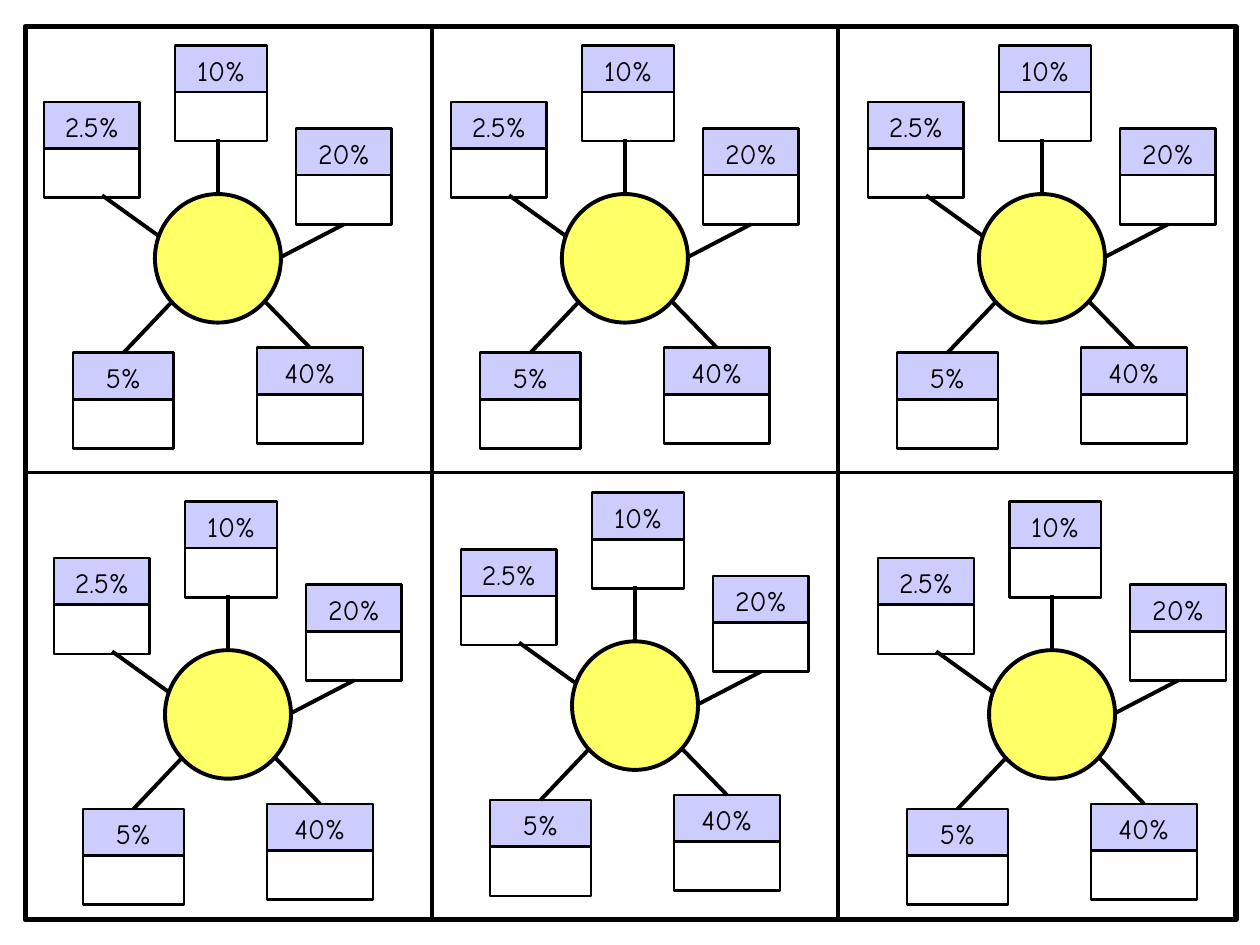
from itertools import product

from lxml import etree
from pptx import Presentation
from pptx.dml.color import RGBColor
from pptx.enum.shapes import MSO_CONNECTOR, MSO_SHAPE
from pptx.enum.text import MSO_ANCHOR, PP_ALIGN
from pptx.oxml.ns import qn
from pptx.util import Inches, Pt

RECTANGLE, OVAL = MSO_SHAPE.RECTANGLE, MSO_SHAPE.OVAL
STRAIGHT = MSO_CONNECTOR.STRAIGHT
MIDDLE, CENTER = MSO_ANCHOR.MIDDLE, PP_ALIGN.CENTER

COLORS = {"line": "000000", "circle": "FFFF66", "label": "CCCCFF", "answer": "FFFFFF"}
FONT = "Comic Neue"
SLIDE_COLUMNS, SLIDE_ROWS = 1000, 750
UNIT = Inches(10) // SLIDE_COLUMNS
TOP, BOTTOM = 0, 2

CIRCLE_WIDTH, CIRCLE_HEIGHT = 100, 102
BOX_HEIGHT, ANSWER_STEP = 39, 37
CIRCLE_COLUMNS = (123, 446, 777)
LOWER_SHIFT = 8
UPPER_ROW = 154
LOWER_ROWS = (516, 509, 516)
FRAME = (20, 21, 961, 709)
DIVIDER_COLUMNS, DIVIDER_ROW = (343, 665), 375

# Label, box column, box row, box width, spoke start, spoke end, joined side
BRANCHES = (
    ("10%", 16, -118, 73, (50, 1), (50, -44), None),
    ("5%", -65, 126, 80, (13, 86), (-26, 126), TOP),
    ("20%", 112, -52, 76, (100, 50), (150, 21), BOTTOM),
    ("40%", 81, 122, 84, (88, 86), (123, 122), TOP),
    ("2.5%", -88, -73, 76, (4, 34), (-42, 1), None),
)


def grid(*counts):
    """Turn grid counts into slide lengths."""
    return [count * UNIT for count in counts]


def color(name):
    """Return the named colour."""
    return RGBColor.from_string(COLORS[name])


def add_outlined(shapes, kind, place, fill, weight):
    """Add a black-outlined shape, hollow when fill is None."""
    shape = shapes.add_shape(kind, *grid(*place))
    shape.shadow.inherit = False
    if fill:
        shape.fill.solid()
        shape.fill.fore_color.rgb = color(fill)
    else:
        shape.fill.background()
    shape.line.color.rgb = color("line")
    shape.line.width = Pt(weight)
    return shape


def add_line(shapes, start, end):
    """Add a straight black line between two grid points."""
    line = shapes.add_connector(STRAIGHT, *grid(*start, *end))
    line.line.color.rgb = color("line")
    line.line.width = Pt(2.25)
    etree.SubElement(line._element.spPr, qn("a:effectLst"))
    return line


def add_percent_box(shapes, column, row, width, text):
    """Add a labelled box above an empty answer box."""
    label = add_outlined(shapes, RECTANGLE, (column, row, width, BOX_HEIGHT), "label", 1.5)
    label.text_frame.vertical_anchor = MIDDLE
    para = label.text_frame.paragraphs[0]
    para.text = text
    para.alignment = CENTER
    para.font.name = FONT
    para.font.size = Pt(16)
    para.font.color.rgb = color("line")
    place = (column, row + ANSWER_STEP, width, BOX_HEIGHT)
    answer = add_outlined(shapes, RECTANGLE, place, "answer", 1.5)
    return {TOP: label, BOTTOM: answer}


def add_spider(slide, column, row):
    """Add one circle with its five percentage branches."""
    shapes = slide.shapes.add_group_shape().shapes
    add_outlined(shapes, OVAL, (column, row, CIRCLE_WIDTH, CIRCLE_HEIGHT), "circle", 2.25)
    for text, across, down, width, start, end, side in BRANCHES:
        boxes = add_percent_box(shapes, column + across, row + down, width, text)
        points = [(column + x, row + y) for x, y in (start, end)]
        spoke = add_line(shapes, *points)
        if side is not None:
            spoke.end_connect(boxes[side], side)


def add_frame(slide):
    """Add the outer frame and the dividers between the six cells."""
    left, top, width, height = FRAME
    add_outlined(slide.shapes, RECTANGLE, FRAME, None, 3)
    add_line(slide.shapes, (left, DIVIDER_ROW), (left + width, DIVIDER_ROW))
    for column in DIVIDER_COLUMNS:
        add_line(slide.shapes, (column, top), (column, top + height))


def main():
    """Build and save the slide."""
    deck = Presentation()
    deck.slide_width, deck.slide_height = grid(SLIDE_COLUMNS, SLIDE_ROWS)
    slide = deck.slides.add_slide(deck.slide_layouts[6])
    for (column, lower_row), lower in product(zip(CIRCLE_COLUMNS, LOWER_ROWS), (False, True)):
        add_spider(slide, column + LOWER_SHIFT * lower, lower_row if lower else UPPER_ROW)
    add_frame(slide)
    deck.save("out.pptx")


if __name__ == "__main__":
    main()
